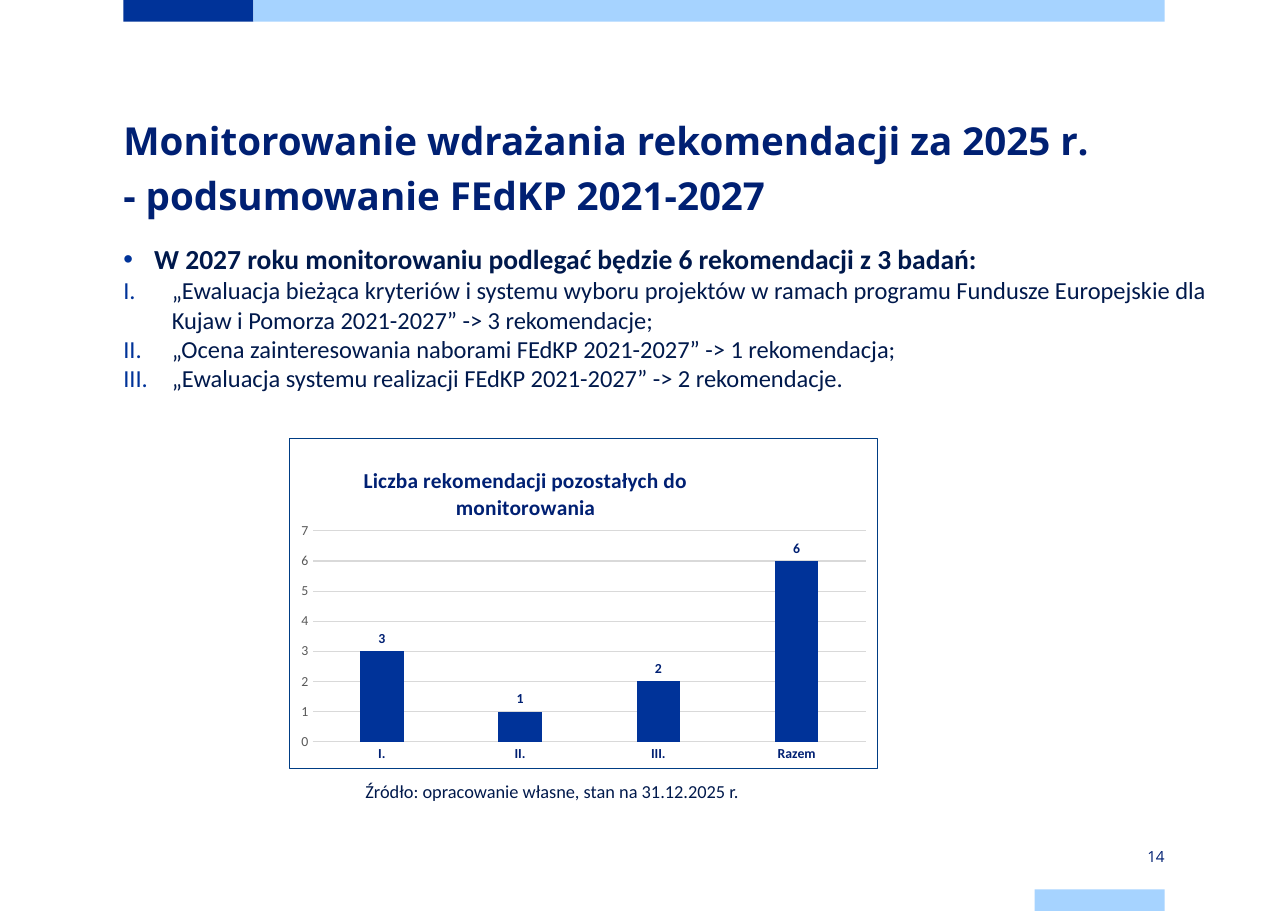
"""Build the slide on recommendations still to be monitored, with a list and a column chart."""
from pptx import Presentation
from pptx import util as u
from pptx.chart.data import CategoryChartData
from pptx.dml.color import RGBColor
from pptx.enum import chart as ch, shapes, text
from pptx.oxml import parse_xml
from pptx.oxml.ns import nsdecls, qn

BLUE = RGBColor(0x00, 0x33, 0x99)
SKY = RGBColor(0xA6, 0xD3, 0xFF)
NAVY = RGBColor(0x00, 0x20, 0x73)
INK = RGBColor(0x00, 0x19, 0x4C)
BORDER = RGBColor(0x00, 0x3D, 0x84)
GREY = RGBColor(0x59, 0x59, 0x59)
GRID = RGBColor(0xD9, 0xD9, 0xD9)

prs = Presentation()
prs.slide_width, prs.slide_height = u.Inches(11.69), u.Inches(8.27)
CELL = prs.slide_height / 42
MARGIN = (prs.slide_width - 48 * CELL) / 2
s = prs.slides.add_slide(prs.slide_layouts[1])


def cells(col, row, cols, rows):
    return [int(v) for v in (MARGIN + col * CELL, row * CELL, cols * CELL, rows * CELL)]


def write(p, words, size, color, font="Calibri", bold=False, align=text.PP_ALIGN.LEFT,
          spacing=1.0, bullet=None, indent=0):
    p.text = words
    p.alignment, p.line_spacing, p.space_before = align, spacing, u.Pt(0)
    if bullet:
        pPr = p._p.get_or_add_pPr()
        pPr.set("marL", str(u.Inches(indent)))
        pPr.set("indent", str(-u.Inches(indent)))
        pPr.append(parse_xml(f'<a:buClr {nsdecls("a")}><a:srgbClr val="{BLUE}"/></a:buClr>'))
        pPr.append(parse_xml(f'<a:{bullet} {nsdecls("a")}/>'))
    for r in p.runs:
        r.font.name, r.font.size, r.font.bold = font, u.Pt(size), bold
        r.font.color.rgb = color


for col, row, cols, color in [(0, 0, 6, BLUE), (6, 0, 42, SKY), (42, 41, 6, SKY)]:
    sp = s.shapes.add_shape(shapes.MSO_SHAPE.RECTANGLE, *cells(col, row, cols, 1))
    sp.shadow.inherit = False
    sp.fill.solid()
    sp.fill.fore_color.rgb = color
    sp.line.fill.background()

title, body = s.shapes.title, s.placeholders[1]
for sp, box in [(title, (0, 5, 48, 6)), (body, (0, 11, 50.4, 26))]:
    sp.left, sp.top, sp.width, sp.height = cells(*box)
    tf = sp.text_frame
    tf.margin_left = tf.margin_top = tf.margin_right = tf.margin_bottom = 0
    tf.vertical_anchor, tf.auto_size = text.MSO_ANCHOR.TOP, text.MSO_AUTO_SIZE.NONE
    tf.word_wrap = True

write(title.text_frame.paragraphs[0],
      "Monitorowanie wdrażania rekomendacji za 2025 r.\v- podsumowanie FEdKP 2021-2027",
      25.2, NAVY, font="Open Sans", bold=True, spacing=u.Pt(36))

tf = body.text_frame
write(tf.paragraphs[0], "W 2027 roku monitorowaniu podlegać będzie 6 rekomendacji z 3 badań:",
      18, INK, bold=True, spacing=u.Pt(24), bullet='buChar char="•"', indent=0.28)
for study in [
    "„Ewaluacja bieżąca kryteriów i systemu wyboru projektów w ramach programu "
    "Fundusze Europejskie dla Kujaw i Pomorza 2021-2027” -> 3 rekomendacje;",
    "„Ocena zainteresowania naborami FEdKP 2021-2027” -> 1 rekomendacja;",
    "„Ewaluacja systemu realizacji FEdKP 2021-2027” -> 2 rekomendacje.",
]:
    write(tf.add_paragraph(), study, 16, INK, bullet='buAutoNum type="romanUcPeriod"', indent=0.44)

number = s.shapes.add_textbox(*cells(42, 39, 6, 1))
tf = number.text_frame
tf.word_wrap, tf.vertical_anchor = True, text.MSO_ANCHOR.MIDDLE
tf.margin_left = tf.margin_right = 0
tf.margin_top = tf.margin_bottom = 0
write(tf.paragraphs[0], "14", 10, NAVY, font="Open Sans", align=text.PP_ALIGN.RIGHT)

source = s.shapes.add_textbox(*cells(10.66, 35.7, 22.35, 1.5))
source.text_frame.word_wrap = True
write(source.text_frame.paragraphs[0], "Źródło: opracowanie własne, stan na 31.12.2025 r.", 12, INK)

heading = "Liczba rekomendacji pozostałych do monitorowania"
data = CategoryChartData()
data.categories = ["I.", "II.", "III.", "Razem"]
data.add_series(heading, [3, 1, 2, 6])
chart = s.shapes.add_chart(ch.XL_CHART_TYPE.COLUMN_CLUSTERED,
                           *cells(7.62, 20.2, 27.17, 15.24), data).chart
chart.has_legend = False
chart.font.name, chart.font.size = "Calibri", u.Pt(10)
write(chart.chart_title.text_frame.paragraphs[0], heading, 14, NAVY, bold=True,
      align=text.PP_ALIGN.CENTER)

plot = chart.plots[0]
plot.gap_width, plot.overlap, plot.vary_by_categories = 219, -27, False
bars = plot.series[0]
bars.format.fill.solid()
bars.format.fill.fore_color.rgb = BLUE
plot.has_data_labels = True
labels = plot.data_labels
labels.show_value, labels.position = True, ch.XL_LABEL_POSITION.OUTSIDE_END

cat, val = chart.category_axis, chart.value_axis
for axis in (cat, val):
    axis.major_tick_mark = axis.minor_tick_mark = ch.XL_TICK_MARK.NONE
val.minimum_scale, val.maximum_scale, val.major_unit = 0, 7, 1
val.has_major_gridlines = True
val.format.line.fill.background()
for line in (cat.format.line, val.major_gridlines.format.line):
    line.color.rgb, line.width = GRID, u.Pt(0.75)
for font, color, bold in [(labels.font, NAVY, True), (cat.tick_labels.font, NAVY, True),
                          (val.tick_labels.font, GREY, False)]:
    font.name, font.size, font.bold = "Calibri", u.Pt(9), bold
    font.color.rgb = color

plot_area = chart.element.find(".//" + qn("c:plotArea"))
title_el = chart.element.find(".//" + qn("c:title"))
for parent, index, target, spots in [
    (title_el, 1, "", {"x": 0.12, "y": 0.07}),
    (plot_area, 0, '<c:layoutTarget val="inner"/>', {"x": 0.04, "y": 0.28, "w": 0.94, "h": 0.64}),
]:
    for old in parent.findall(qn("c:layout")):
        parent.remove(old)
    modes = "".join(f'<c:{k}Mode val="edge"/>' for k in "xy")
    sizes = "".join(f'<c:{k} val="{v}"/>' for k, v in spots.items())
    parent.insert(index, parse_xml(
        f'<c:layout {nsdecls("c")}><c:manualLayout>{target}{modes}{sizes}</c:manualLayout></c:layout>'))
chart.element.find(qn("c:chart")).addnext(parse_xml(
    f'<c:spPr {nsdecls("c", "a")}><a:solidFill><a:srgbClr val="FFFFFF"/></a:solidFill>'
    f'<a:ln w="{u.Pt(0.75)}"><a:solidFill><a:srgbClr val="{BORDER}"/></a:solidFill></a:ln></c:spPr>'))

prs.save("out.pptx")
